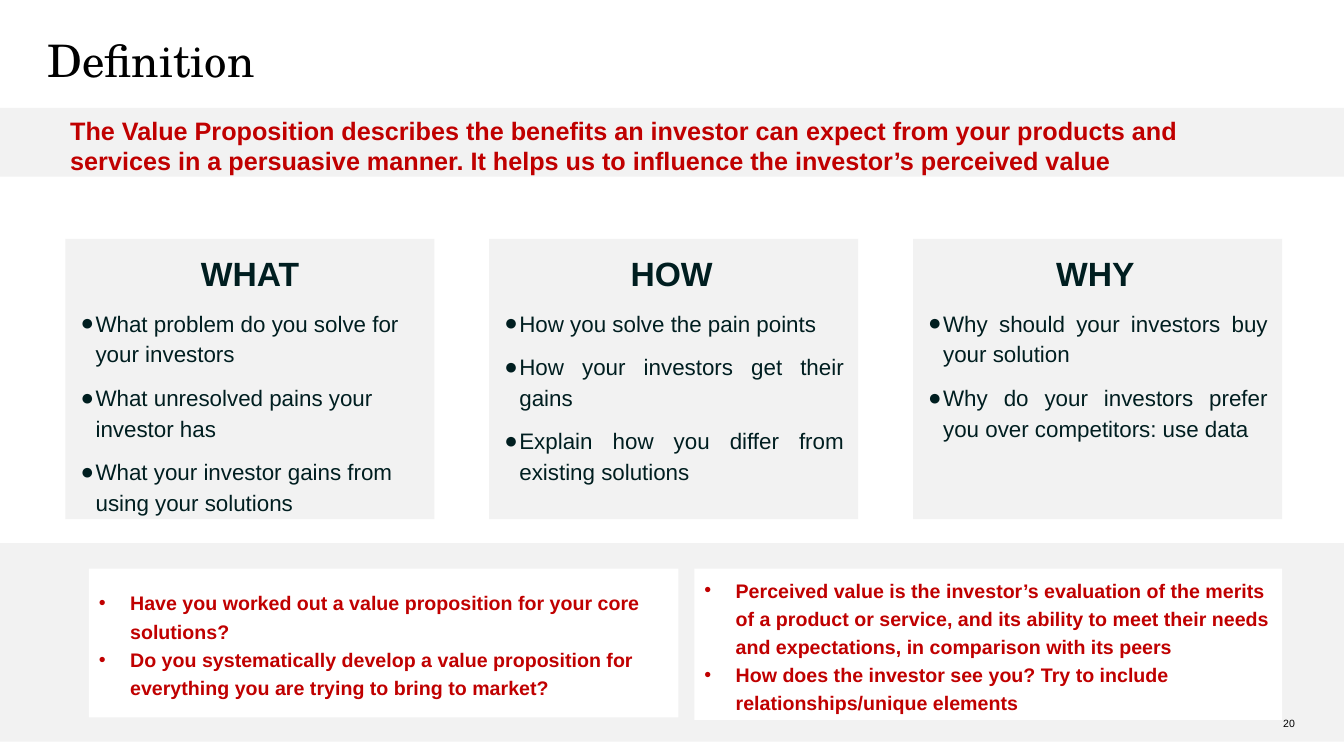
from lxml import etree
from pptx import Presentation
from pptx.dml.color import RGBColor
from pptx.enum.shapes import MSO_SHAPE
from pptx.enum.text import MSO_ANCHOR, PP_ALIGN
from pptx.oxml.ns import qn
from pptx.util import Cm, Pt

TITLE = "Definition"
CLAIM = (
    "The Value Proposition describes the benefits an investor can expect from "
    "your products and services in a persuasive manner. It helps us to influence "
    "the investor’s perceived value"
)
PAGE = "20"
LEFT, CENTER, JUST = PP_ALIGN.LEFT, PP_ALIGN.CENTER, PP_ALIGN.JUSTIFY
CARDS = [
    ("WHAT", LEFT, 0.25, [
        "What problem do you solve for your investors",
        "What unresolved pains your investor has",
        "What your investor gains from using your solutions",
    ]),
    ("HOW", JUST, 0.36, [
        "How you solve the pain points",
        "How your investors get their gains",
        "Explain how you differ from existing solutions",
    ]),
    ("WHY", JUST, 0.36, [
        "Why should your investors buy your solution",
        "Why do your investors prefer you over competitors: use data",
    ]),
]
NOTES = [
    ((2.24, 14.33, 14.86, 3.75), [
        "Have you worked out a value proposition for your core solutions?",
        "Do you systematically develop a value proposition for everything "
        "you are trying to bring to market?",
    ]),
    ((17.5, 14.33, 14.81, 3.81), [
        "Perceived value is the investor’s evaluation of the merits of a product "
        "or service, and its ability to meet their needs and expectations, "
        "in comparison with its peers",
        "How does the investor see you? Try to include "
        "relationships/unique elements",
    ]),
]

RECT = MSO_SHAPE.RECTANGLE
TOP, MIDDLE = MSO_ANCHOR.TOP, MSO_ANCHOR.MIDDLE
GRAY = RGBColor(0xF2, 0xF2, 0xF2)
WHITE = RGBColor(0xFF, 0xFF, 0xFF)
RED = RGBColor(0xC0, 0x00, 0x00)
DARK = RGBColor(0x00, 0x1E, 0x20)
BLACK = RGBColor(0x00, 0x00, 0x00)
WIDE, HIGH = 33.87, 19.05
CARD_X, CARD_Y, CARD_W, CARD_H, STEP = 1.65, 6.02, 9.3, 7.06, 10.68

deck = Presentation()
deck.slide_width, deck.slide_height = Cm(WIDE), Cm(HIGH)
slide = deck.slides.add_slide(deck.slide_layouts[6])


def add_rect(box, fill):
    rect = slide.shapes.add_shape(RECT, *map(Cm, box))
    rect.shadow.inherit = False
    rect.fill.solid()
    rect.fill.fore_color.rgb = fill
    rect.line.fill.background()
    return rect


def add_box(box):
    return slide.shapes.add_textbox(*map(Cm, box))


def set_frame(shape, pads=(0.25, 0.13, 0.25, 0.13), anchor=TOP):
    frame = shape.text_frame
    frame.word_wrap = True
    frame.vertical_anchor = anchor
    (frame.margin_left, frame.margin_top,
     frame.margin_right, frame.margin_bottom) = map(Cm, pads)
    return frame


def add_text(frame, text, size, color, bold=False, font="Arial", align=LEFT,
             lead=1.0, before=0, mark=None, left=0, hang=0):
    para = frame.paragraphs[0]
    if para.runs:
        para = frame.add_paragraph()
    para.alignment = align
    para.line_spacing = lead
    para.space_before = Pt(before)
    run = para.add_run()
    run.text = text
    run.font.size = Pt(size)
    run.font.name = font
    run.font.bold = bold
    run.font.color.rgb = color
    if left:
        props = para._p.get_or_add_pPr()
        props.set("marL", str(Cm(left)))
        props.set("indent", str(Cm(-hang)))
        if mark:
            face = etree.SubElement(props, qn("a:buFont"))
            face.set("typeface", "Arial")
            etree.SubElement(props, qn("a:buChar")).set("char", mark)


add_rect((0, 2.72, WIDE, 1.73), GRAY)
add_rect((0, 13.69, WIDE, 5), GRAY)

frame = set_frame(add_box((1.19, 0.97, 31.47, 2.54)), (0, 0, 0, 0))
add_text(frame, TITLE, 32, BLACK, font="TeX Gyre Schola", lead=0.9)
frame = set_frame(add_box((32.26, 18.08, 0.5, 0.36)), (0, 0, 0, 0))
add_text(frame, PAGE, 7.5, BLACK, left=0.08)
frame = set_frame(add_box((1.52, 3.02, 30.81, 1.3)), anchor=MIDDLE)
add_text(frame, CLAIM, 18, RED, bold=True)

for box, items in NOTES:
    frame = set_frame(add_rect(box, WHITE), anchor=MIDDLE)
    for item in items:
        add_text(frame, item, 14, RED, bold=True, lead=1.2,
                 mark="•", left=0.79, hang=0.79)

for i, (head, align, pad, items) in enumerate(CARDS):
    card = add_rect((CARD_X + i * STEP, CARD_Y, CARD_W, CARD_H), GRAY)
    frame = set_frame(card, (0.25, 0.25, pad, 0.25))
    add_text(frame, head, 24, DARK, bold=True, align=CENTER, lead=1.1)
    for item in items:
        add_text(frame, item, 16, DARK, align=align, lead=1.15, before=9,
                 mark="●", left=0.51, hang=0.38)

deck.save("out.pptx")
